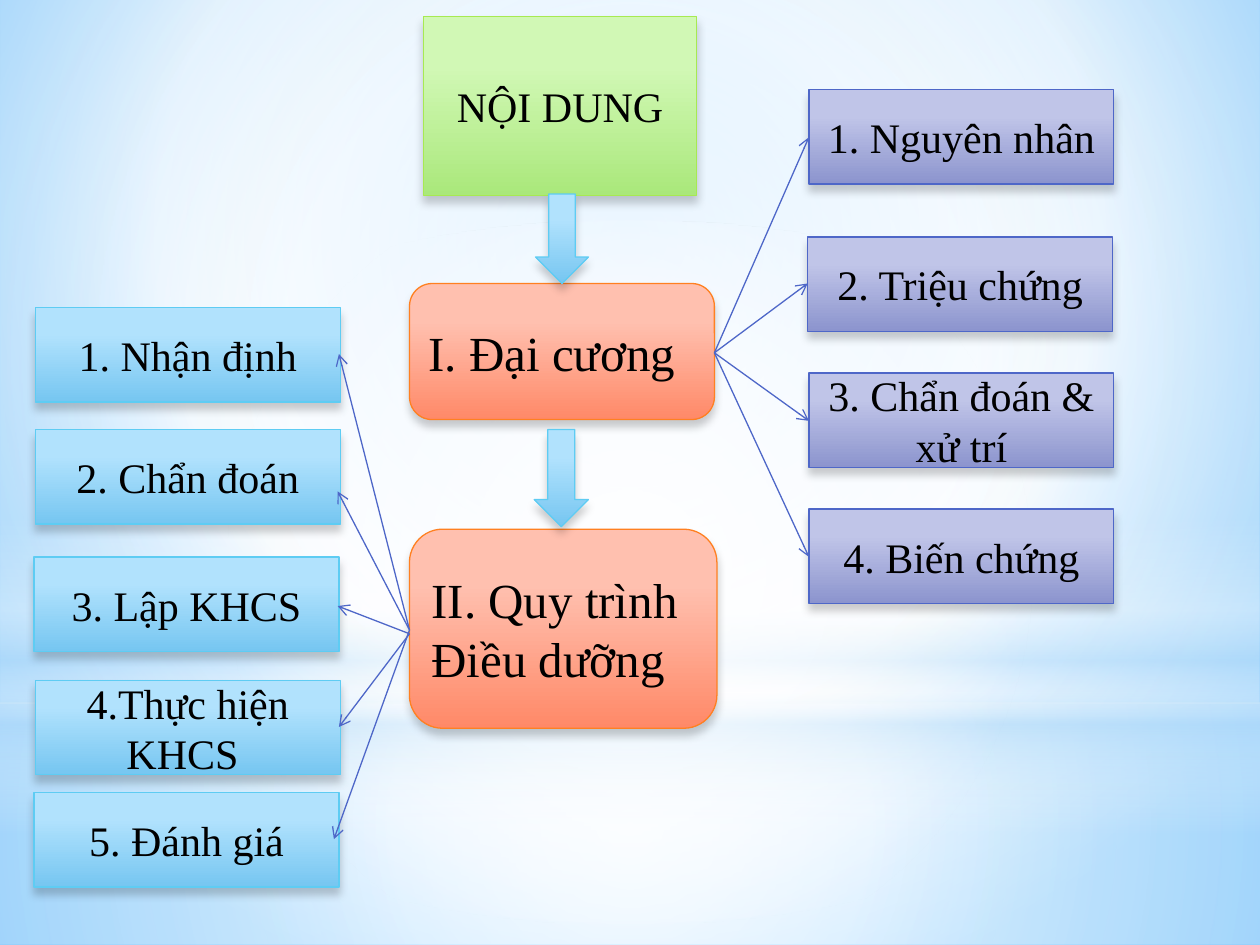
from lxml import etree
from pptx import Presentation
from pptx.dml.color import RGBColor
from pptx.enum.shapes import MSO_CONNECTOR, MSO_SHAPE
from pptx.enum.text import MSO_ANCHOR, MSO_AUTO_SIZE, PP_ALIGN
from pptx.oxml.ns import qn
from pptx.util import Inches, Pt

RECT, ROUND = MSO_SHAPE.RECTANGLE, MSO_SHAPE.ROUNDED_RECTANGLE
OVAL, DOWN = MSO_SHAPE.OVAL, MSO_SHAPE.DOWN_ARROW
LEFT, CENTER = PP_ALIGN.LEFT, PP_ALIGN.CENTER
MIDDLE, FIXED = MSO_ANCHOR.MIDDLE, MSO_AUTO_SIZE.NONE
STRAIGHT = MSO_CONNECTOR.STRAIGHT

HEX = {"text": "000000", "white": "FFFFFF", "haze": "B4DCFA",
       "core": "9ED5FF", "edge": "5BB9FF", "link": "4E67C8"}
# Each tone: upper fill, lower fill, outline
TONES = {"green": ("D1F8B5", "AAE87B", "A7EA52"),
         "coral": ("FFC0AF", "FF8968", "FF8021"),
         "violet": ("C0C5E8", "8C94CE", "4E67C8"),
         "blue": ("B1E2FD", "76C6F1", "5ECCF3")}
MID = (50, 50, 50, 50)


def sub(node, tag, **attrs):
    """Add a DrawingML child element."""
    return etree.SubElement(node, qn("a:" + tag),
                            {key: str(val) for key, val in attrs.items()})


class Deck:
    face, thin = "Times New Roman", Pt(0.75)

    def __init__(self):
        self.prs = Presentation()
        self.prs.slide_width, self.prs.slide_height = Inches(10), Inches(7.5)
        self.slide = self.prs.slides.add_slide(self.prs.slide_layouts[5])
        self.shapes = self.slide.shapes

    def blend(self, fill, root, stops, rect=None):
        """Gradient of (percent, hex, opacity) stops: radial if rect is given."""
        fill.gradient()
        grad = next(root.iter(qn("a:gradFill")))
        for child in list(grad):
            grad.remove(child)
        items = sub(grad, "gsLst")
        for pos, color, alpha in stops:
            stop = sub(items, "gs", pos=pos * 1000)
            sub(sub(stop, "srgbClr", val=color), "alpha", val=alpha * 1000)
        if rect:
            sides = {side: val * 1000 for side, val in zip("ltrb", rect)}
            sub(sub(grad, "path", path="circle"), "fillToRect", **sides)
        else:
            sub(grad, "lin", ang=5400000, scaled=0)

    def back(self, stops, rect):
        self.blend(self.slide.background.fill, self.slide._element, stops, rect)

    def glow(self, kind, box, stops, rect=None):
        shape = self.shapes.add_shape(kind, *map(Inches, box))
        shape.shadow.inherit = False
        shape.line.fill.background()
        self.blend(shape.fill, shape._element, stops, rect)

    def paint(self, shape, tone):
        top, base, edge = TONES[tone]
        self.blend(shape.fill, shape._element, [(28, top, 100), (100, base, 100)])
        shape.line.color.rgb = RGBColor.from_string(edge)
        shape.line.width = self.thin
        shape.shadow.inherit = False
        shade = sub(shape._element.spPr.find(qn("a:effectLst")), "outerShdw",
                    blurRad=Pt(5), dist=Pt(4), dir=5400000, rotWithShape=0)
        sub(sub(shade, "srgbClr", val=HEX["text"]), "alpha", val=20000)

    def label(self, shape, text, size, align):
        frame = shape.text_frame
        look = {"word_wrap": True, "auto_size": FIXED, "vertical_anchor": MIDDLE}
        for key, val in look.items():
            setattr(frame, key, val)
        para = frame.paragraphs[0]
        para.alignment = align
        run = para.add_run()
        run.text = text
        for key, val in {"name": self.face, "size": Pt(size)}.items():
            setattr(run.font, key, val)
        run.font.color.rgb = RGBColor.from_string(HEX["text"])

    def title(self, text, box, tone):
        shape = self.shapes.title
        for key, val in zip(("left", "top", "width", "height"), box):
            setattr(shape, key, Inches(val))
        sub(sub(shape._element.spPr, "prstGeom", prst="ellipse"), "avLst")
        self.shapes._spTree.append(shape._element)  # above the backdrop
        self.paint(shape, tone)
        self.label(shape, text, 24, CENTER)

    def node(self, kind, box, tone, text="", size=24, align=CENTER):
        shape = self.shapes.add_shape(kind, *map(Inches, box))
        self.paint(shape, tone)
        if text:
            self.label(shape, text, size, align)

    def link(self, start, end):
        line = self.shapes.add_connector(STRAIGHT, *map(Inches, start + end))
        line.line.color.rgb = RGBColor.from_string(HEX["link"])
        line.line.width = self.thin
        sub(line._element.spPr.find(qn("a:ln")), "tailEnd", type="arrow")
        sub(line._element.spPr, "effectLst")


def main():
    deck = Deck()
    white, haze = HEX["white"], HEX["haze"]

    # Backdrop
    deck.back([(0, HEX["core"], 100), (60, white, 100), (100, HEX["edge"], 100)],
              (20, 10, 20, 60))
    deck.glow(RECT, (0, 5.58, 10, 1.92),
              [(0, white, 91), (37, white, 76), (100, haze, 79)], MID)
    deck.glow(RECT, (0, 0, 10, 5.58),
              [(0, white, 89), (48, white, 62), (100, haze, 79)], MID)
    deck.glow(RECT, (0, 4.12, 10, 2.5),
              [(0, white, 0), (29, white, 30), (45, haze, 40),
               (55, white, 26), (65, haze, 60), (100, white, 0)])
    deck.glow(OVAL, (0, 1.75, 10, 5.58), [(0, white, 100), (56, white, 0)], MID)

    # Title and main topics
    deck.title("NỘI DUNG", (3.36, 0.13, 2.17, 1.42), "green")
    deck.node(ROUND, (3.25, 2.25, 2.42, 1.08), "coral", "I. Đại cương", 28, LEFT)
    deck.node(ROUND, (3.25, 4.2, 2.44, 1.58), "coral",
              "II. Quy trình Điều dưỡng", 28, LEFT)

    # Branches: text, box left and top, link start, link end
    general = [("1. Nguyên nhân", 6.42, 0.71, (5.67, 2.8), (6.42, 1.09)),
               ("2. Triệu chứng", 6.41, 1.88, (5.67, 2.8), (6.41, 2.25)),
               ("3. Chẩn đoán & xử trí", 6.42, 2.96, (5.67, 2.8), (6.42, 3.34)),
               ("4. Biến chứng", 6.42, 4.04, (5.67, 2.8), (6.42, 4.42))]
    nursing = [("1. Nhận định", 0.28, 2.44, (3.25, 5), (2.69, 2.81)),
               ("2. Chẩn đoán", 0.28, 3.41, (3.25, 5), (2.68, 3.9)),
               ("3. Lập KHCS", 0.27, 4.42, (3.25, 5.03), (2.68, 4.81)),
               ("4.Thực hiện KHCS ", 0.28, 5.4, (3.25, 5.03), (2.69, 5.77)),
               ("5. Đánh giá", 0.27, 6.29, (3.25, 5), (2.65, 6.66))]
    for tone, branch in (("violet", general), ("blue", nursing)):
        for text, left, top, _, _ in branch:
            deck.node(RECT, (left, top, 2.42, 0.75), tone, text)
        for *_, start, end in branch:
            deck.link(start, end)

    # Flow arrows
    for box in ((4.25, 1.54, 0.42, 0.71), (4.24, 3.41, 0.43, 0.77)):
        deck.node(DOWN, box, "blue")

    deck.prs.save("out.pptx")


if __name__ == "__main__":
    main()
